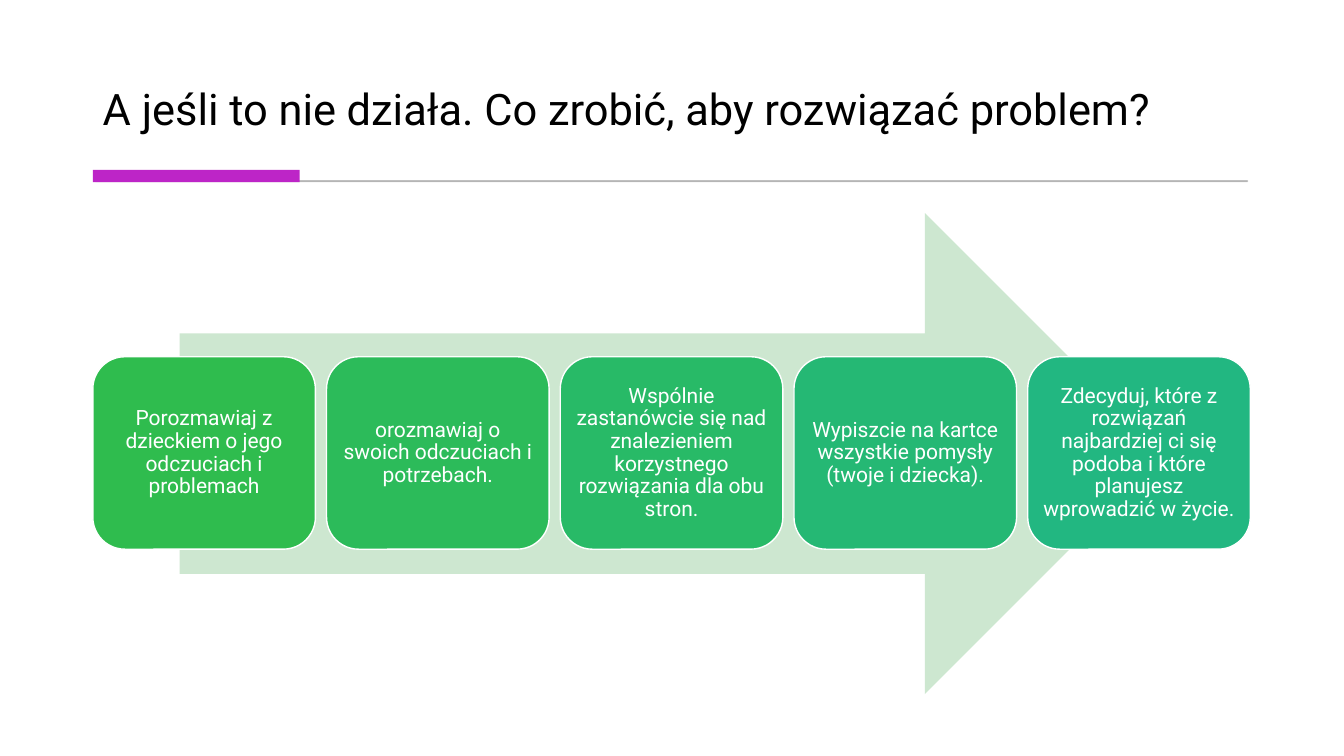
import lxml.etree
import pptx
import pptx.dml.color
import pptx.enum.shapes
import pptx.enum.text
import pptx.oxml.ns
import pptx.util
from pptx.util import Cm

COLORS = {
    "background": "FFFFFF",
    "title": "000000",
    "rule": "595959",
    "accent": "BD25C7",
    "arrow": "CDE7D0",
    "step_text": "FFFFFF",
    "step_border": "FFFFFF",
}
FONT = "Roboto"
STEPS = [
    ("Porozmawiaj z dzieckiem o jego odczuciach i problemach", "2FBC4E"),
    ("orozmawiaj o swoich odczuciach i potrzebach.", "2CBB5A"),
    ("Wspólnie zastanówcie się nad znalezieniem korzystnego rozwiązania dla obu stron.", "28BA67"),
    ("Wypiszcie na kartce wszystkie pomysły (twoje i dziecka).", "25B874"),
    ("Zdecyduj, które z rozwiązań najbardziej ci się podoba i które planujesz wprowadzić w życie.", "22B781"),
]
STEP_LEFT = 2.34
STEP_PITCH = 5.89
PRESET = pptx.enum.shapes.MSO_SHAPE
ALIGN = pptx.enum.text.PP_ALIGN
ANCHOR = pptx.enum.text.MSO_ANCHOR


def rgb(value):
    return pptx.dml.color.RGBColor.from_string(value)


def add_block(slide, preset, left, top, width, height, fill):
    block = slide.shapes.add_shape(preset, Cm(left), Cm(top), Cm(width), Cm(height))
    block.shadow.inherit = False
    block.fill.solid()
    block.fill.fore_color.rgb = rgb(fill)
    block.line.fill.background()
    return block


def set_border(block, color, width):
    block.line.color.rgb = rgb(color)
    block.line.width = pptx.util.Pt(width)


def write_text(frame, text, size, color, align, anchor):
    frame.word_wrap = True
    frame.vertical_anchor = anchor
    frame.text = text
    paragraph = frame.paragraphs[0]
    paragraph.alignment = align
    paragraph.line_spacing = 0.9
    font = paragraph.runs[0].font
    font.name = FONT
    font.size = pptx.util.Pt(size)
    font.color.rgb = rgb(color)


def add_title(slide, text):
    title = slide.shapes.add_textbox(Cm(2.34), Cm(0.71), Cm(29.18), Cm(2.82))
    write_text(title.text_frame, text, 31, COLORS["title"], ALIGN.LEFT, ANCHOR.BOTTOM)


def add_rule(slide):
    rule = add_block(slide, PRESET.RECTANGLE, 2.41, 4.55, 29.03, 0.03, COLORS["rule"])
    set_border(rule, COLORS["rule"], 0.75)
    for color in rule._element.spPr.findall(".//" + pptx.oxml.ns.qn("a:srgbClr")):
        alpha = lxml.etree.SubElement(color, pptx.oxml.ns.qn("a:alpha"))
        alpha.set("val", "30000")


def add_step(slide, left, text, fill):
    step = add_block(slide, PRESET.ROUNDED_RECTANGLE, left, 8.99, 5.61, 4.85, fill)
    set_border(step, COLORS["step_border"], 1)
    frame = step.text_frame
    frame.margin_left = frame.margin_right = Cm(0.15)
    frame.margin_top = frame.margin_bottom = Cm(0.15)
    write_text(frame, text, 15, COLORS["step_text"], ALIGN.CENTER, ANCHOR.MIDDLE)


def main():
    presentation = pptx.Presentation()
    presentation.slide_width = Cm(33.87)
    presentation.slide_height = Cm(19.05)
    slide = presentation.slides.add_slide(presentation.slide_layouts[6])
    slide.background.fill.solid()
    slide.background.fill.fore_color.rgb = rgb(COLORS["background"])

    add_title(slide, "A jeśli to nie działa. Co zrobić, aby rozwiązać problem?")
    add_rule(slide)
    add_block(slide, PRESET.RECTANGLE, 2.34, 4.28, 5.21, 0.31, COLORS["accent"])
    add_block(slide, PRESET.RIGHT_ARROW, 4.53, 5.37, 24.84, 12.12, COLORS["arrow"])
    for index, (text, fill) in enumerate(STEPS):
        add_step(slide, STEP_LEFT + index * STEP_PITCH, text, fill)

    presentation.save("out.pptx")


if __name__ == "__main__":
    main()
